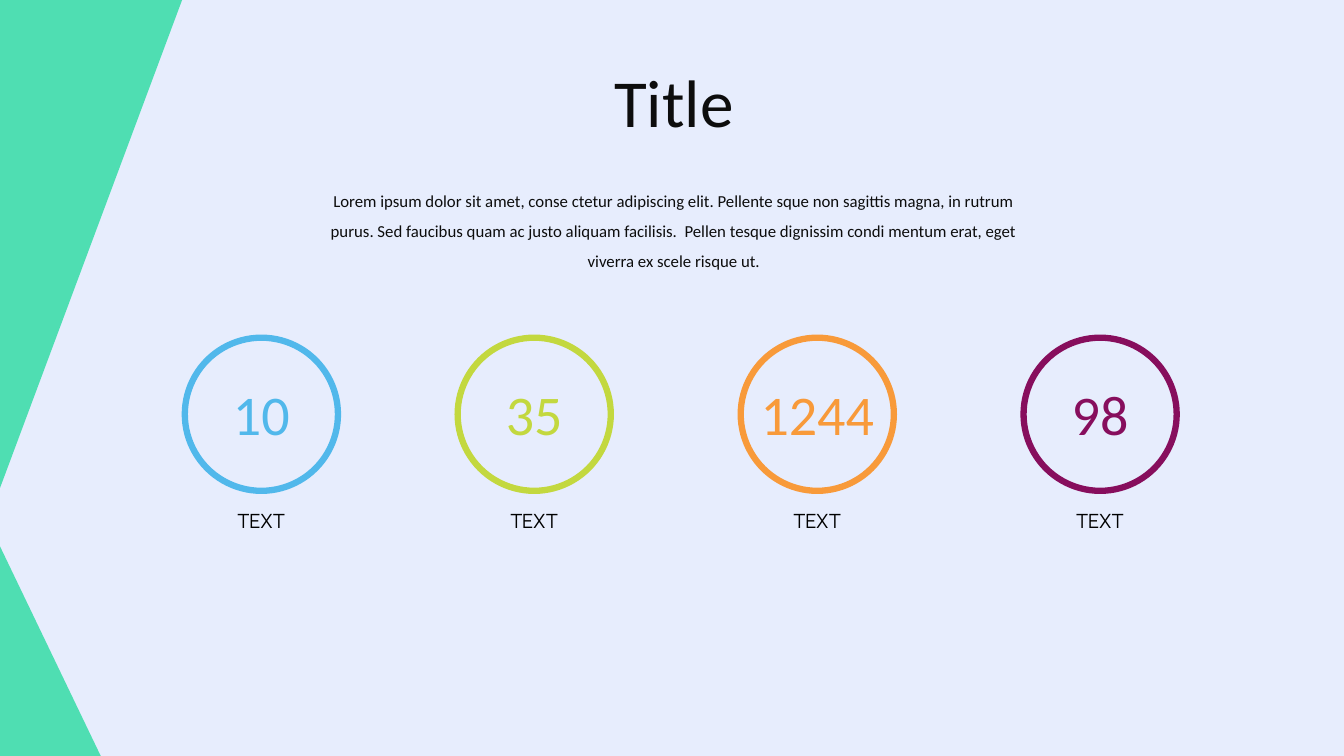
from pptx import Presentation
from pptx.dml.color import RGBColor
from pptx.enum.shapes import MSO_SHAPE as Preset
from pptx.enum.text import MSO_AUTO_SIZE as AutoSize, PP_ALIGN as Align
from pptx.util import Pt

COLORS = {
    "background": "E7EDFD",
    "corner": "4FDEB2",
    "ink": "0D0D0D",
    "label": "000000",
    "blue": "51B8EB",
    "lime": "C3D83F",
    "orange": "F89A3A",
    "plum": "870E5D",
}
CIRCLE = 109.4

# Circle centre, value, label, colour
COUNTERS = [
    (186.7, "10", "TEXT", "blue"),
    (381.6, "35", "TEXT", "lime"),
    (583.8, "1244", "TEXT", "orange"),
    (785.8, "98", "TEXT", "plum"),
]
INTRO = (
    "Lorem ipsum dolor sit amet, conse ctetur adipiscing elit. Pellente sque non "
    "sagittis magna, in rutrum purus. Sed faucibus quam ac justo aliquam facilisis.  "
    "Pellen tesque dignissim condi mentum erat, eget viverra ex scele risque ut."
)


def color(name):
    return RGBColor.from_string(COLORS[name])


def add_text(page, text, left, top, width, height, *, size, ink="ink",
             font="Calibri", spacing=None):
    box = page.shapes.add_textbox(Pt(left), Pt(top), Pt(width), Pt(height))
    box.text_frame.word_wrap = True
    box.text_frame.auto_size = AutoSize.SHAPE_TO_FIT_TEXT
    para = box.text_frame.paragraphs[0]
    para.alignment = Align.CENTER
    para.line_spacing = spacing
    span = para.add_run()
    span.text = text
    span.font.size = Pt(size)
    span.font.name = font
    span.font.color.rgb = color(ink)


def add_corner(page, left, top, width, height, upper=False):
    corner = page.shapes.add_shape(
        Preset.RIGHT_TRIANGLE, Pt(left), Pt(top), Pt(width), Pt(height))
    corner.shadow.inherit = False
    corner.fill.solid()
    corner.fill.fore_color.rgb = color("corner")
    corner.line.fill.background()
    if upper:
        # Half turn plus mirror puts the right angle at the top left
        corner.rotation = 180
        corner.element.spPr.get_or_add_xfrm().set("flipH", "1")


def add_heading(page, left, top, width):
    center = left + width / 2
    add_text(page, "Title", center - 220.3, top, 440.6, 65.5, size=48)
    add_text(page, INTRO, left, top + 85.7, width, 72.7, size=12, spacing=1.5)


def add_counter(page, center, top, value, label, ink):
    ring = page.shapes.add_shape(
        Preset.OVAL, Pt(center - CIRCLE / 2), Pt(top), Pt(CIRCLE), Pt(CIRCLE))
    ring.shadow.inherit = False
    ring.fill.background()
    ring.line.color.rgb = color(ink)
    ring.line.width = Pt(4.5)
    add_text(page, value, center - 50.8, top + 26.6, 101.6, 55.4, size=40, ink=ink)
    add_text(page, label, center - 42.8, top + 118.6, 85.6, 24.5,
             size=14, ink="label", font="Manrope")


def main():
    deck = Presentation()
    deck.slide_width, deck.slide_height = Pt(960), Pt(540)
    page = deck.slides.add_slide(deck.slide_layouts[6])
    page.background.fill.solid()
    page.background.fill.fore_color.rgb = color("background")

    # Left-hand corners
    add_corner(page, 0, 390.2, 72, 149.8)
    add_corner(page, 0, -0.7, 130.3, 349.2, upper=True)

    # Title and introduction
    add_heading(page, 227.5, 39.6, 507.6)

    # Row of counters
    for center, value, label, ink in COUNTERS:
        add_counter(page, center, 241.2, value, label, ink)

    deck.save("out.pptx")


if __name__ == "__main__":
    main()
